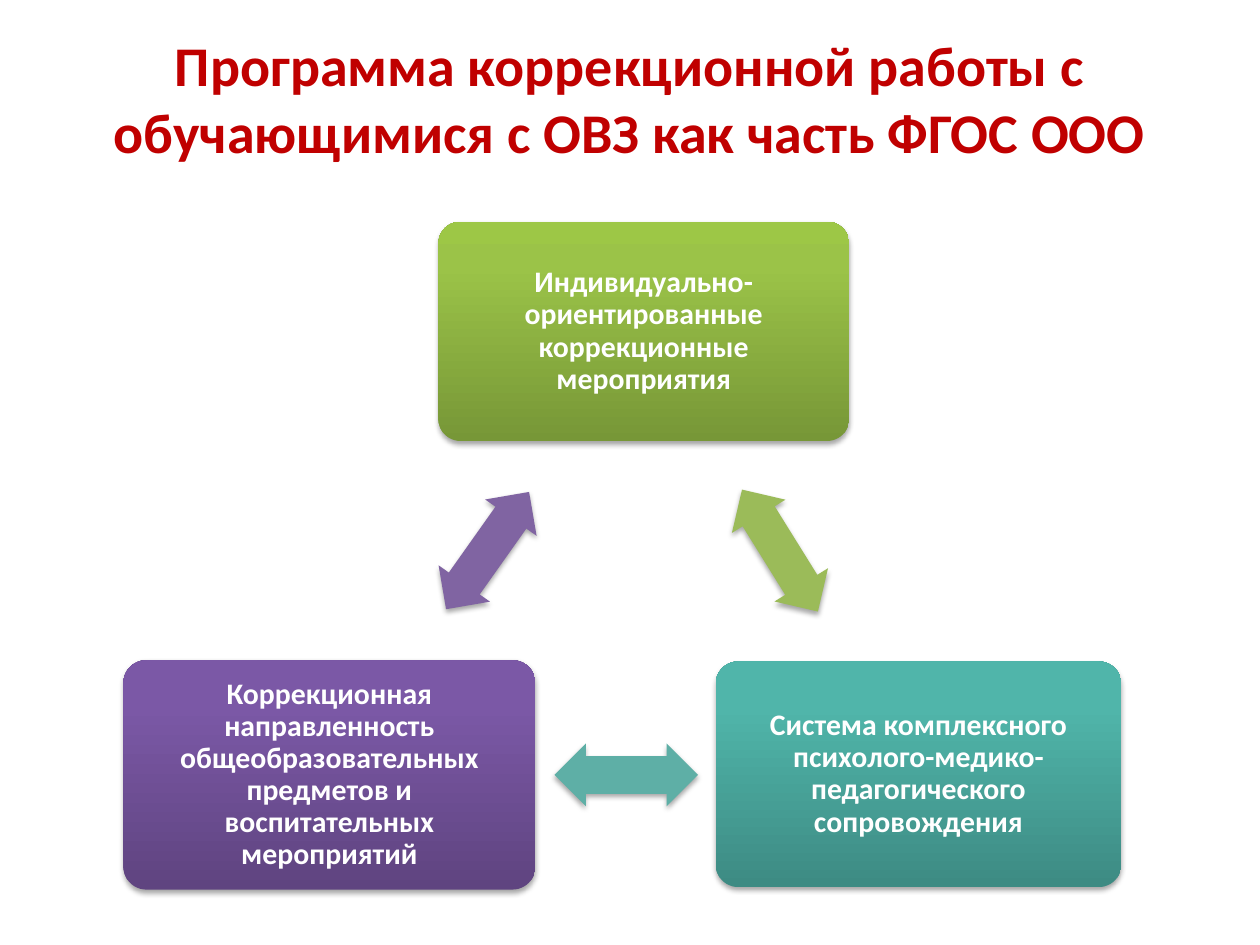
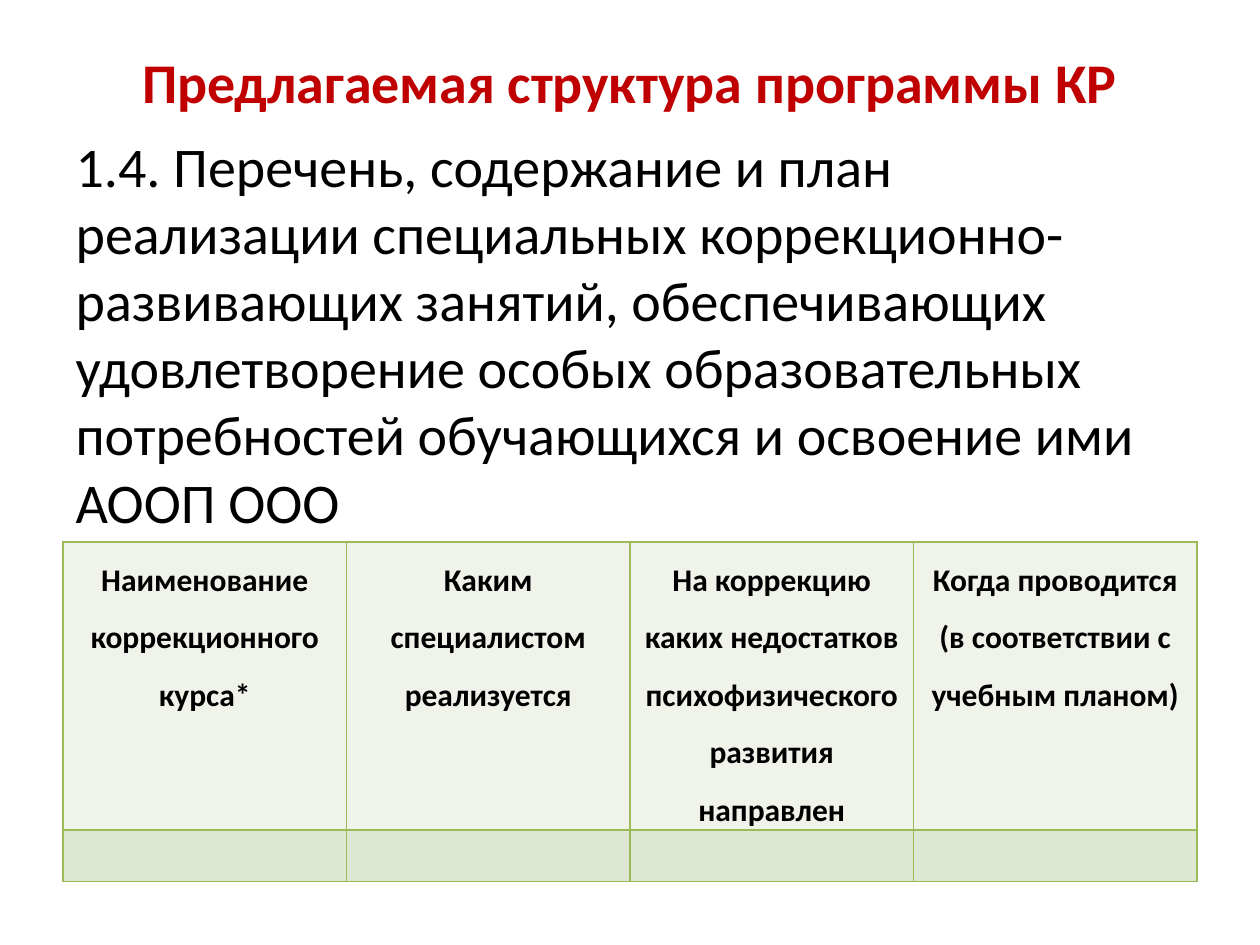
from typing import NamedTuple

from lxml.etree import SubElement
from pptx import Presentation
from pptx.dml.color import RGBColor
from pptx.enum.shapes import MSO_SHAPE
from pptx.enum.text import MSO_ANCHOR, MSO_AUTO_SIZE, PP_ALIGN
from pptx.oxml import parse_xml
from pptx.oxml.ns import nsdecls, qn
from pptx.util import Inches, Pt

# Shared look
FONT = "Calibri"
RED = RGBColor(0xC0, 0x00, 0x00)
BLACK = RGBColor(0x00, 0x00, 0x00)
WHITE = RGBColor(0xFF, 0xFF, 0xFF)
GREEN = RGBColor(0x9B, 0xBB, 0x59)
TEAL = RGBColor(0x5E, 0xAF, 0xA6)
PURPLE = RGBColor(0x80, 0x64, 0xA2)
HEADER_FILL = RGBColor(0xEF, 0xF3, 0xEA)
ROW_FILL = RGBColor(0xDE, 0xE7, 0xD1)
GREEN_SHADES = (RGBColor(0x77, 0x97, 0x37), RGBColor(0x9B, 0xC3, 0x48), RGBColor(0x9D, 0xC7, 0x46))
TEAL_SHADES = (RGBColor(0x3D, 0x8B, 0x83), RGBColor(0x50, 0xB5, 0xAA), RGBColor(0x4E, 0xB8, 0xAC))
PURPLE_SHADES = (RGBColor(0x5F, 0x44, 0x80), RGBColor(0x7B, 0x58, 0xA6), RGBColor(0x7C, 0x57, 0xA8))
SHADE_POSITIONS = (0, 80, 100)

# Slide grid: 100 columns by 75 rows
SLIDE_WIDTH, SLIDE_HEIGHT = Inches(10), Inches(7.5)
COLUMN, ROW = SLIDE_WIDTH / 100, SLIDE_HEIGHT / 75
LEFT, CONTENT_WIDTH = 5, 90


class Area(NamedTuple):
    column: float
    row: float
    columns: float
    rows: float

    def lengths(self) -> tuple:
        return (round(self.column * COLUMN), round(self.row * ROW),
                round(self.columns * COLUMN), round(self.rows * ROW))


class Component(NamedTuple):
    text: str
    area: Area
    shades: tuple


class Link(NamedTuple):
    column: float
    row: float
    rotation: float
    color: RGBColor


COMPONENTS = (
    Component("Индивидуально-ориентированные коррекционные мероприятия",
              Area(34.8, 17.6, 32.6, 17.4), GREEN_SHADES),
    Component("Система комплексного психолого-медико-педагогического сопровождения",
              Area(56.8, 52.5, 32.2, 17.9), TEAL_SHADES),
    Component("Коррекционная направленность общеобразовательных предметов и воспитательных мероприятий",
              Area(9.8, 52.4, 32.7, 18.2), PURPLE_SHADES),
)
LINKS = (
    Link(56.2, 41.2, 58.1, GREEN),
    Link(44, 59, 180, TEAL),
    Link(33, 41.2, 305.3, PURPLE),
)
LINK_COLUMNS, LINK_ROWS = 11.4, 5
COURSE_HEADERS = (
    "Наименование коррекционного курса*",
    "Каким специалистом реализуется",
    "На коррекцию каких недостатков психофизического развития направлен",
    "Когда проводится (в соответствии с учебным планом)",
)


def write(frame, text: str, *, size: float, color: RGBColor, bold: bool = False,
          align=PP_ALIGN.CENTER, spacing: float = 1.0) -> None:
    frame.word_wrap = True
    paragraph = frame.paragraphs[0]
    paragraph.alignment = align
    paragraph.line_spacing = spacing
    run = paragraph.add_run()
    run.text = text
    run.font.name = FONT
    run.font.size = Pt(size)
    run.font.bold = bold
    run.font.color.rgb = color


def place(shape, area: Area) -> None:
    shape.left, shape.top, shape.width, shape.height = area.lengths()


def add_titled_slide(deck, layout: int, title: str, rows: float):
    slide = deck.slides.add_slide(deck.slide_layouts[layout])
    heading = slide.shapes.title
    place(heading, Area(LEFT, 3, CONTENT_WIDTH, rows))
    heading.text_frame.auto_size = MSO_AUTO_SIZE.NONE
    heading.text_frame.vertical_anchor = MSO_ANCHOR.MIDDLE
    write(heading.text_frame, title, size=32, color=RED, bold=True)
    return slide


def add_raised_shape(slide, preset, area: Area, *adjustments: float):
    """Add an outline-free shape with a soft shadow below it."""
    shape = slide.shapes.add_shape(preset, *area.lengths())
    for index, value in enumerate(adjustments):
        shape.adjustments[index] = value
    shape.line.fill.background()
    shape.shadow.inherit = False
    effects = shape._element.spPr.find(qn("a:effectLst"))
    effects.append(parse_xml(
        f'<a:outerShdw {nsdecls("a")} blurRad="{Pt(3.1)}" dist="{Pt(1.8)}" dir="5400000" '
        'rotWithShape="0"><a:srgbClr val="000000"><a:alpha val="35000"/></a:srgbClr></a:outerShdw>'))
    return shape


def shade(shape, colors: tuple) -> None:
    """Fill from the bottom up with the three shades."""
    shape.fill.gradient()
    shape.fill.gradient_angle = 90
    stops = shape._element.spPr.find(qn("a:gradFill")).find(qn("a:gsLst"))
    stops.clear()
    for position, color in zip(SHADE_POSITIONS, colors):
        stop = SubElement(stops, qn("a:gs"), pos=str(position * 1000))
        SubElement(stop, qn("a:srgbClr"), val=str(color))


def add_component(slide, component: Component) -> None:
    box = add_raised_shape(slide, MSO_SHAPE.ROUNDED_RECTANGLE, component.area, 0.1)
    shade(box, component.shades)
    frame = box.text_frame
    frame.margin_left = frame.margin_right = frame.margin_top = frame.margin_bottom = Inches(0.07)
    frame.vertical_anchor = MSO_ANCHOR.MIDDLE
    write(frame, component.text, size=17, color=WHITE, bold=True, spacing=0.9)


def add_link(slide, link: Link) -> None:
    area = Area(link.column, link.row, LINK_COLUMNS, LINK_ROWS)
    arrow = add_raised_shape(slide, MSO_SHAPE.LEFT_RIGHT_ARROW, area, 0.6, 0.5)
    arrow.rotation = link.rotation
    arrow.fill.solid()
    arrow.fill.fore_color.rgb = link.color


def style_cell(cell, fill: RGBColor) -> None:
    properties = cell._tc.get_or_add_tcPr()
    for side in ("lnL", "lnR", "lnT", "lnB"):
        border = SubElement(properties, qn(f"a:{side}"), w=str(Pt(1)))
        SubElement(SubElement(border, qn("a:solidFill")), qn("a:srgbClr"), val=str(GREEN))
    cell.fill.solid()
    cell.fill.fore_color.rgb = fill


def add_course_table(slide) -> None:
    area = Area(LEFT, 43, CONTENT_WIDTH, 26.9)
    courses = slide.shapes.add_table(2, len(COURSE_HEADERS), *area.lengths()).table
    for row, rows in zip(courses.rows, (22.8, 4.1)):
        row.height = round(rows * ROW)
    for column, header in enumerate(COURSE_HEADERS):
        heading = courses.cell(0, column)
        heading.margin_left = heading.margin_right = Inches(0.07)
        heading.margin_top = heading.margin_bottom = 0
        write(heading.text_frame, header, size=18, color=BLACK, bold=True, spacing=1.5)
        style_cell(heading, HEADER_FILL)
        style_cell(courses.cell(1, column), ROW_FILL)


def add_program_slide(deck) -> None:
    slide = add_titled_slide(
        deck, 5, "Программа коррекционной работы с обучающимися с ОВЗ как часть ФГОС ООО", 9.5)
    for component, link in zip(COMPONENTS, LINKS):
        add_component(slide, component)
        add_link(slide, link)


def add_structure_slide(deck) -> None:
    slide = add_titled_slide(deck, 1, "Предлагаемая структура программы КР", 6.9)
    section = slide.placeholders[1]
    place(section, Area(LEFT, 9.9, CONTENT_WIDTH, 57.1))
    write(section.text_frame,
          "1.4. Перечень, содержание и план реализации специальных коррекционно-развивающих "
          "занятий, обеспечивающих удовлетворение особых образовательных потребностей "
          "обучающихся и освоение ими АООП ООО",
          size=32, color=BLACK, align=PP_ALIGN.LEFT)
    # Plain paragraph: no bullet, no hanging indent
    properties = section.text_frame.paragraphs[0]._p.get_or_add_pPr()
    properties.set("marL", "0")
    properties.set("indent", "0")
    SubElement(properties, qn("a:buNone"))
    add_course_table(slide)


def main() -> None:
    deck = Presentation()
    deck.slide_width, deck.slide_height = SLIDE_WIDTH, SLIDE_HEIGHT
    add_program_slide(deck)
    add_structure_slide(deck)
    deck.save("out.pptx")


if __name__ == "__main__":
    main()
